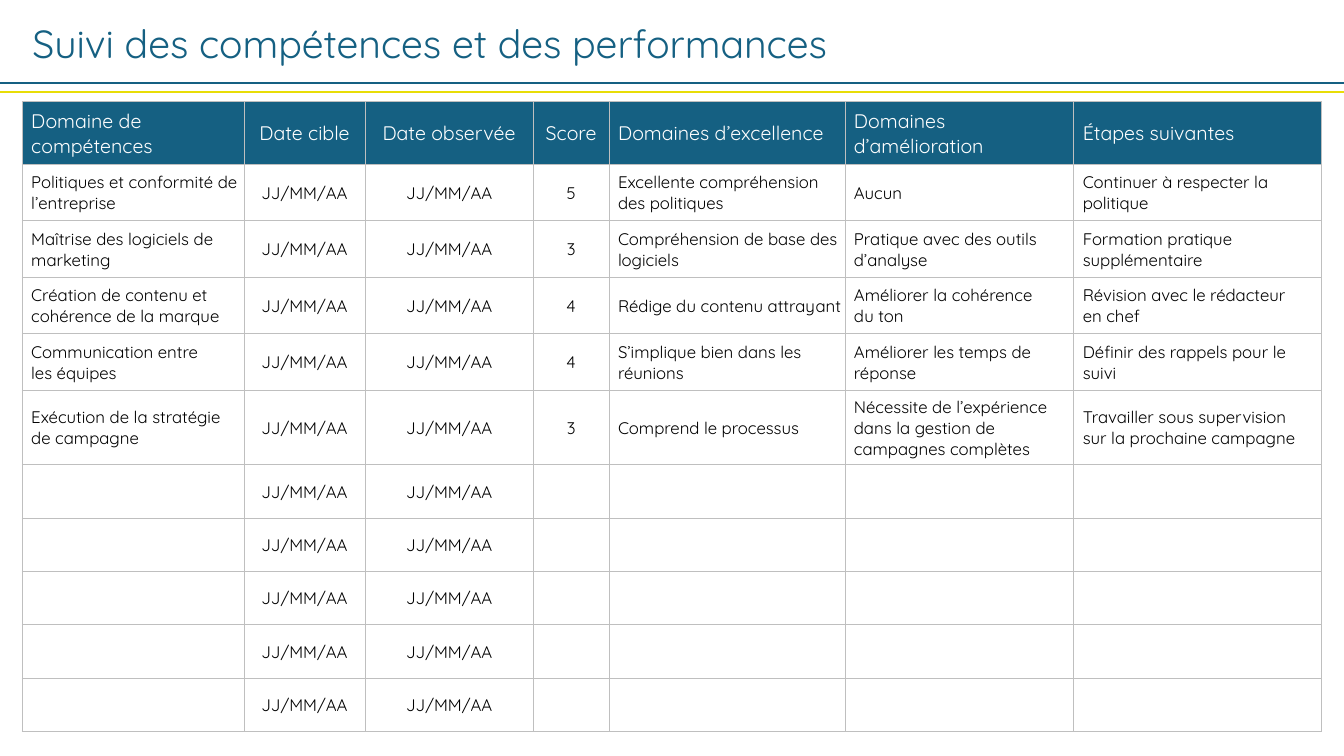
from lxml.etree import SubElement
from pptx import Presentation
from pptx.dml.color import RGBColor
from pptx.enum.shapes import MSO_CONNECTOR
from pptx.enum.text import MSO_ANCHOR, MSO_AUTO_SIZE, PP_ALIGN
from pptx.oxml.ns import qn
from pptx.util import Inches, Pt

COLORS = {
    "blue": "156082",
    "yellow": "E8DD06",
    "grid": "BFBFBF",
    "white": "FFFFFF",
    "black": "000000",
}
FONT = "Quicksand"
DATE = "JJ/MM/AA"
HEADERS = [
    "Domaine de compétences", "Date cible", "Date observée", "Score",
    "Domaines d’excellence", "Domaines d’amélioration", "Étapes suivantes",
]
SKILLS = [
    ("Politiques et conformité de l’entreprise", "5",
     "Excellente compréhension des politiques", "Aucun",
     "Continuer à respecter la politique"),
    ("Maîtrise des logiciels de marketing", "3",
     "Compréhension de base des logiciels",
     "Pratique avec des outils d’analyse",
     "Formation pratique supplémentaire"),
    ("Création de contenu et cohérence de la marque", "4",
     "Rédige du contenu attrayant",
     "Améliorer la cohérence\vdu ton",
     "Révision avec le rédacteur\ven chef"),
    ("Communication entre\vles équipes", "4",
     "S’implique bien dans les réunions",
     "Améliorer les temps de réponse",
     "Définir des rappels pour le suivi"),
    ("Exécution de la stratégie de campagne", "3",
     "Comprend le processus",
     "Nécessite de l’expérience dans la gestion de campagnes complètes",
     "Travailler sous supervision\vsur la prochaine campagne"),
]
BLANK_ROWS = 5
COLUMN_WIDTHS = [2.2, 1.2, 1.67, 0.75, 2.34, 2.27, 2.46]
ROW_HEIGHTS = [0.62] + [0.56] * 4 + [0.74] + [0.53] * BLANK_ROWS
CENTERED_COLUMNS = {1, 2, 3}


def rgb(color):
    """Return the named colour from the palette."""
    return RGBColor.from_string(COLORS[color])


def format_text(text_frame, size, color, align):
    """Apply alignment and font to all the text in a frame."""
    for paragraph in text_frame.paragraphs:
        paragraph.alignment = align
        for run in paragraph.runs:
            run.font.name = FONT
            run.font.size = Pt(size)
            run.font.color.rgb = rgb(color)


def add_title(slide, text):
    """Place and fill the slide title."""
    title = slide.shapes.title
    title.left, title.top = Inches(0.22), Inches(0.14)
    title.width, title.height = Inches(10.2), Inches(0.57)
    frame = title.text_frame
    frame.text = text
    frame.word_wrap = True
    frame.auto_size = MSO_AUTO_SIZE.SHAPE_TO_FIT_TEXT
    frame.vertical_anchor = MSO_ANCHOR.TOP
    format_text(frame, 28, "blue", PP_ALIGN.LEFT)


def add_rule(slide, top, color, width):
    """Draw a horizontal rule across the slide."""
    rule = slide.shapes.add_connector(
        MSO_CONNECTOR.STRAIGHT, 0, Inches(top), width, Inches(top))
    rule.line.color.rgb = rgb(color)
    rule.line.width = Pt(1.5)
    SubElement(rule._element.spPr, qn("a:effectLst"))


def set_borders(cell):
    """Give a cell thin grey borders on its four sides."""
    properties = cell._tc.get_or_add_tcPr()
    for index, side in enumerate(("lnL", "lnR", "lnT", "lnB")):
        border = properties.makeelement(qn(f"a:{side}"), {"w": str(Pt(0.5))})
        fill = SubElement(border, qn("a:solidFill"))
        SubElement(fill, qn("a:srgbClr"), val=COLORS["grid"])
        properties.insert(index, border)


def fill_cell(cell, text, is_header, is_centered):
    """Write and format one table cell."""
    cell.fill.solid()
    cell.fill.fore_color.rgb = rgb("blue" if is_header else "white")
    set_borders(cell)
    cell.vertical_anchor = MSO_ANCHOR.MIDDLE
    cell.margin_left = Inches(0.01 if is_centered else 0.09)
    cell.margin_right = cell.margin_top = Inches(0.01)
    cell.margin_bottom = 0
    cell.text_frame.text = text
    format_text(
        cell.text_frame,
        14 if is_header else 12,
        "white" if is_header else "black",
        PP_ALIGN.CENTER if is_centered else PP_ALIGN.LEFT,
    )


def add_tracking_table(slide):
    """Build the skills table, with blank rows at the end."""
    entries = SKILLS + [("",) * 5] * BLANK_ROWS
    rows = [HEADERS] + [[skill, DATE, DATE, *rest] for skill, *rest in entries]
    table = slide.shapes.add_table(
        len(rows), len(HEADERS), Inches(0.22), Inches(1.01),
        Inches(sum(COLUMN_WIDTHS)), Inches(sum(ROW_HEIGHTS))).table
    for column, width in zip(table.columns, COLUMN_WIDTHS):
        column.width = Inches(width)
    for row, height in zip(table.rows, ROW_HEIGHTS):
        row.height = Inches(height)
    for row_index, texts in enumerate(rows):
        for column_index, text in enumerate(texts):
            fill_cell(table.cell(row_index, column_index), text,
                      row_index == 0, column_index in CENTERED_COLUMNS)


def main():
    """Build and save the skills tracking slide."""
    presentation = Presentation()
    presentation.slide_width = Inches(13.33)
    presentation.slide_height = Inches(7.5)
    slide = presentation.slides.add_slide(presentation.slide_layouts[5])
    add_title(slide, "Suivi des compétences et des performances")
    add_rule(slide, 0.82, "blue", presentation.slide_width)
    add_rule(slide, 0.91, "yellow", presentation.slide_width)
    add_tracking_table(slide)
    presentation.save("out.pptx")


if __name__ == "__main__":
    main()
